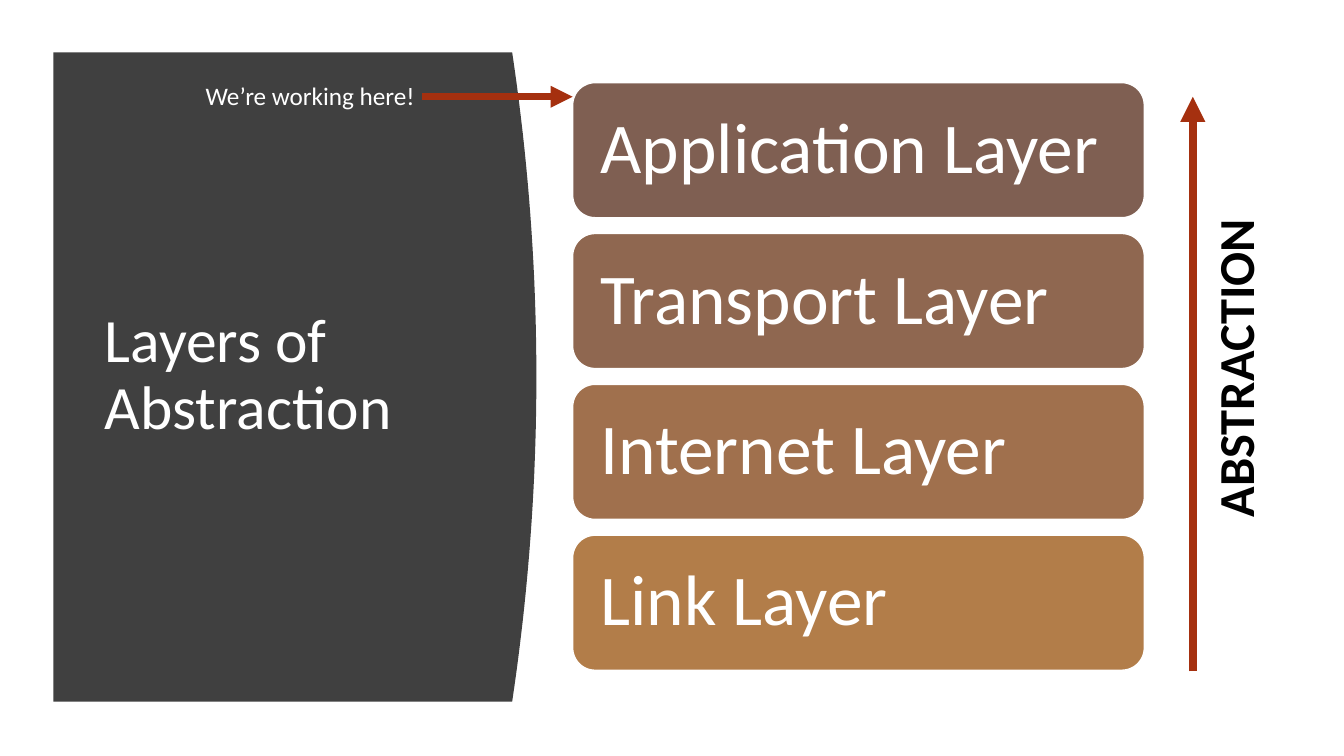
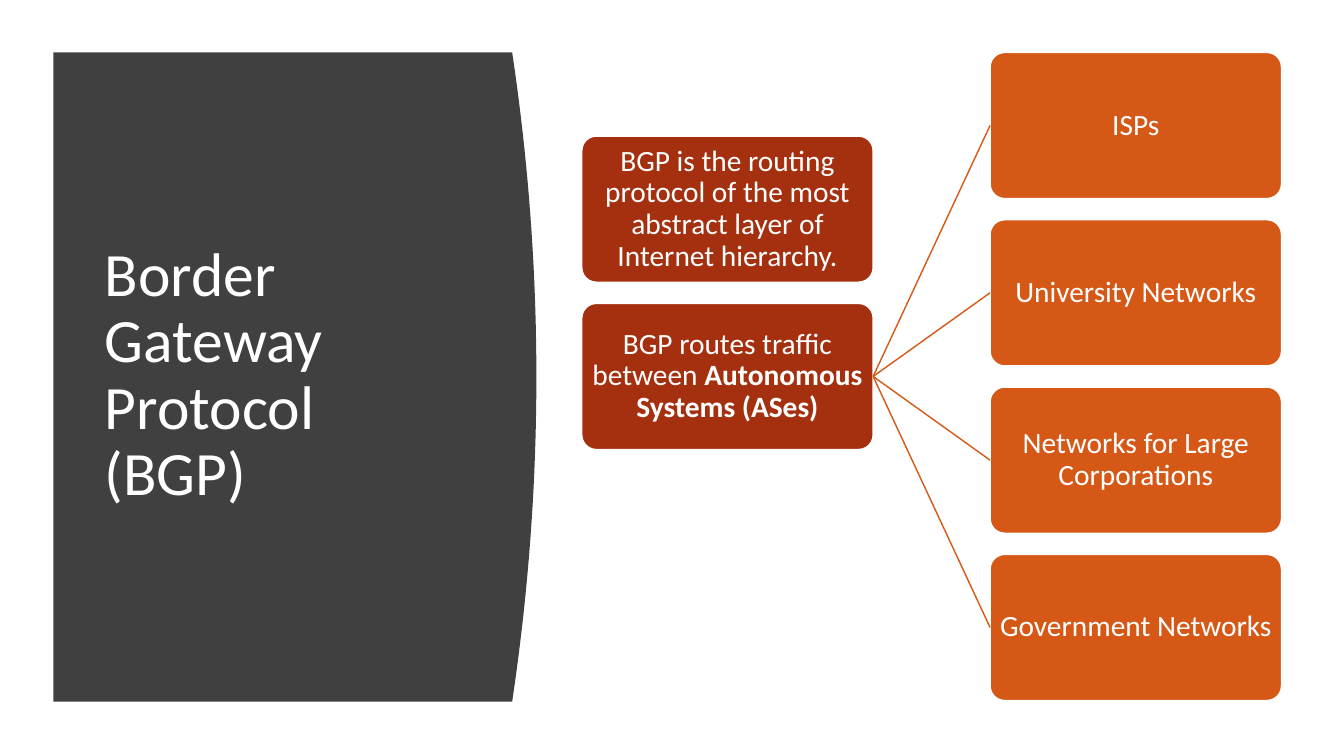
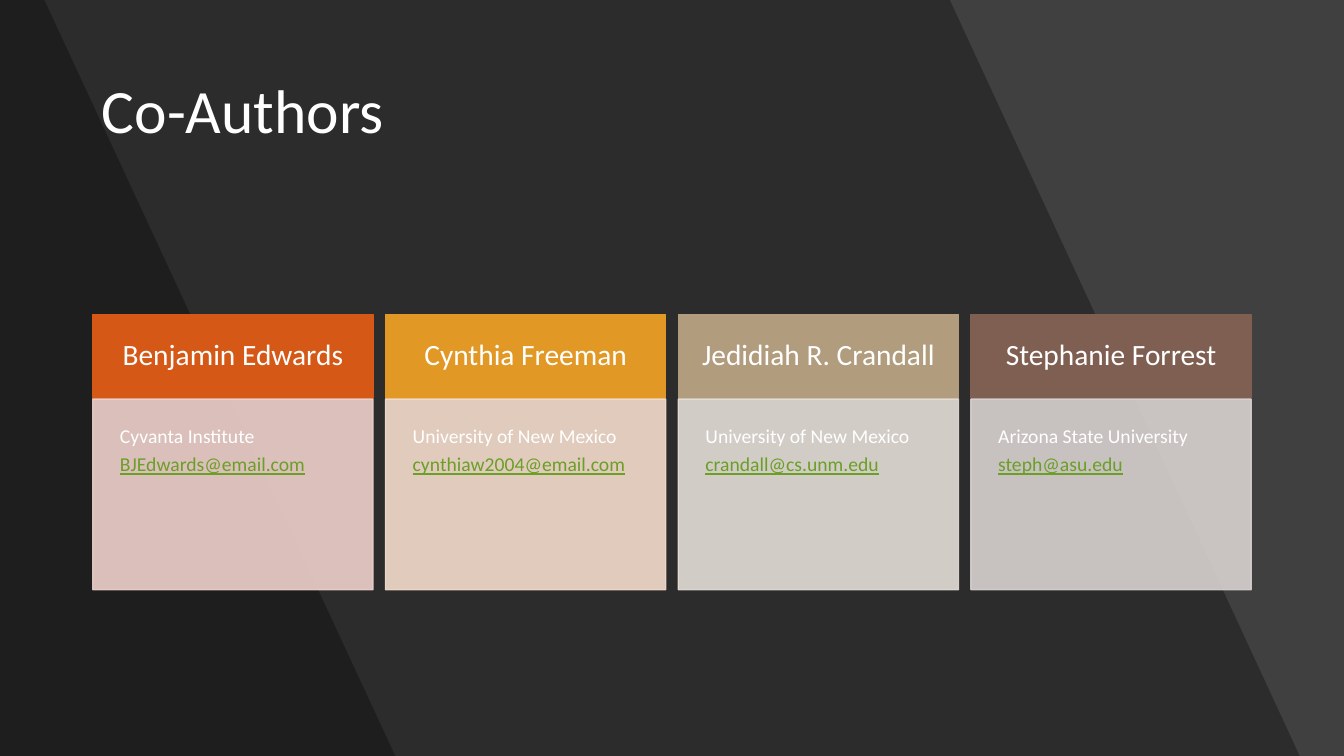
from dataclasses import dataclass

from lxml.etree import SubElement
from pptx import Presentation
from pptx.dml.color import RGBColor
from pptx.enum.shapes import MSO_CONNECTOR, MSO_SHAPE
from pptx.enum.text import MSO_ANCHOR, MSO_AUTO_SIZE, PP_ALIGN
from pptx.oxml.ns import qn
from pptx.util import Inches, Pt


@dataclass(frozen=True)
class Theme:
    font: str = "Calibri"
    white: str = "FFFFFF"
    black: str = "000000"
    dark: str = "404040"
    red: str = "A5300F"
    orange: str = "D55816"
    link: str = "6B9F25"
    layers: tuple = ("7F5F52", "8F6750", "A0704D", "B27D49")
    headers: tuple = ("D55816", "E19825", "B19C7D", "7F5F52")
    bodies: tuple = ("EFD1CC", "F4DDCD", "E4DED7", "D8D2D1")
    title_size: int = 44
    layer_size: int = 51
    axis_size: int = 36
    node_size: int = 21
    note_size: int = 18
    detail_size: int = 14


THEME = Theme()
TITLE_ONLY = 5
SIDE_TITLE = (0.94, 1.11, 3.74, 5.24)
TOP_TITLE = (0.91, 0.4, 11.51, 1.45)


def rgb(color):
    return RGBColor.from_string(color)


def inches(lengths):
    return [Inches(length) for length in lengths]


def spread(first, last, count):
    return [first + (last - first) * step / (count - 1) for step in range(count)]


def style_para(para, size, color, align=PP_ALIGN.LEFT, spacing=0.9):
    para.alignment = align
    para.line_spacing = spacing
    para.font.name = THEME.font
    para.font.size = Pt(size)
    para.font.color.rgb = rgb(color)


def write(box, text, size, color=THEME.white, align=PP_ALIGN.LEFT,
          anchor=MSO_ANCHOR.MIDDLE, inset=None, spacing=0.9):
    frame = box.text_frame
    frame.word_wrap = True
    frame.auto_size = MSO_AUTO_SIZE.NONE
    frame.vertical_anchor = anchor
    if inset is not None:
        frame.margin_left = frame.margin_right = Inches(inset)
        frame.margin_top = frame.margin_bottom = Inches(inset)
    para = frame.paragraphs[0]
    para.text = text
    style_para(para, size, color, align, spacing)
    return para


def set_alpha(shape, percent):
    for color in shape.element.spPr.iter(qn("a:srgbClr")):
        SubElement(color, qn("a:alpha"), val=str(percent * 1000))


def add_block(page, kind, place, fill, line, corner=None):
    block = page.shapes.add_shape(kind, *inches(place))
    block.shadow.inherit = False
    block.fill.solid()
    block.fill.fore_color.rgb = rgb(fill)
    block.line.color.rgb = rgb(line)
    block.line.width = Pt(1)
    if corner is not None:
        block.adjustments[0] = corner
    return block


def add_outline(page, points, fill):
    corners = [tuple(inches(point)) for point in points]
    builder = page.shapes.build_freeform(*corners[0], scale=1.0)
    builder.add_line_segments(corners[1:], close=True)
    outline = builder.convert_to_shape()
    outline.shadow.inherit = False
    outline.fill.solid()
    outline.fill.fore_color.rgb = rgb(fill)
    outline.line.fill.background()
    return outline


def add_line(page, start, end, color, width, arrow=False):
    line = page.shapes.add_connector(MSO_CONNECTOR.STRAIGHT, *inches(start + end))
    line.line.color.rgb = rgb(color)
    line.line.width = Pt(width)
    if arrow:
        SubElement(line.line._get_or_add_ln(), qn("a:tailEnd"), type="triangle")
    SubElement(line.element.spPr, qn("a:effectLst"))
    return line


def add_label(page, place, text, size, color):
    label = page.shapes.add_textbox(*inches(place))
    para = write(label, text, size, color, anchor=MSO_ANCHOR.TOP, spacing=1.0)
    return label, para


def add_title(page, text, place):
    title = page.shapes.title
    title.left, title.top, title.width, title.height = inches(place)
    write(title, text, THEME.title_size)
    page.shapes.element.append(title.element)


def add_page(deck):
    return deck.slides.add_slide(deck.slide_layouts[TITLE_ONLY])


def add_panel_page(deck, title):
    page = add_page(deck)
    top, bottom, bulge = 0.52, 6.96, 0.24
    middle, half = (top + bottom) / 2, (bottom - top) / 2
    curve = [(5.32 - bulge * ((y - middle) / half) ** 2, y)
             for y in spread(top, bottom, 41)]
    add_outline(page, [(0.53, top), *curve, (0.53, bottom)], THEME.dark)
    add_title(page, title, SIDE_TITLE)
    return page


def add_node(page, left, top, text, fill):
    node = add_block(page, MSO_SHAPE.ROUNDED_RECTANGLE, (left, top, 2.89, 1.45),
                     fill, THEME.white, corner=0.1)
    para = write(node, text, THEME.node_size, align=PP_ALIGN.CENTER, inset=0.01)
    return node, para


def add_card(page, left, person, institution, address, header_fill, body_fill):
    header = add_block(page, MSO_SHAPE.RECTANGLE, (left, 3.12, 2.78, 0.83),
                       header_fill, header_fill)
    write(header, person, THEME.node_size, align=PP_ALIGN.CENTER, inset=0.22)
    body = add_block(page, MSO_SHAPE.RECTANGLE, (left, 3.96, 2.78, 1.89),
                     body_fill, body_fill)
    set_alpha(body, 90)
    para = write(body, institution, THEME.detail_size,
                 anchor=MSO_ANCHOR.TOP, inset=0.27)
    para.space_after = Pt(5)
    contact = body.text_frame.add_paragraph()
    contact.text = address
    style_para(contact, THEME.detail_size, THEME.link)
    contact.font.underline = True


def build_layers(deck):
    page = add_panel_page(deck, "Layers of Abstraction")
    names = ("Application Layer", "Transport Layer", "Internet Layer", "Link Layer")
    for name, top, fill in zip(names, spread(0.82, 5.31, len(names)), THEME.layers):
        layer = add_block(page, MSO_SHAPE.ROUNDED_RECTANGLE,
                          (5.68, top, 5.67, 1.34), fill, THEME.white)
        write(layer, name, THEME.layer_size, inset=0.21)
    add_line(page, (11.83, 6.66), (11.83, 0.96), THEME.red, 6, arrow=True)
    axis, para = add_label(page, (11.89, 1.87, 0.81, 3.36), "ABSTRACTION",
                           THEME.axis_size, THEME.black)
    axis.text_frame._txBody.bodyPr.set("vert", "vert270")
    para.font.bold = True
    add_line(page, (4.19, 0.96), (5.68, 0.96), THEME.red, 5.25, arrow=True)
    add_label(page, (1.94, 0.75, 2.4, 0.4), "We’re working here!",
              THEME.note_size, THEME.white)


def build_protocol(deck):
    page = add_panel_page(deck, "Border Gateway Protocol (BGP)")
    add_node(page, 5.77, 1.35, "BGP is the routing protocol of the most abstract "
             "layer of Internet hierarchy.", THEME.red)
    router, para = add_node(page, 5.77, 3.01, "BGP routes traffic between ", THEME.red)
    span = para.add_run()
    span.text = "Autonomous Systems (ASes)"
    span.font.bold = True
    networks = ("ISPs", "University Networks", "Networks for Large Corporations",
                "Government Networks")
    for name, top in zip(networks, spread(0.52, 5.5, len(networks))):
        network, _ = add_node(page, 9.82, top, name, THEME.orange)
        link = add_line(page, (8.66, 3.73), (9.82, top), THEME.orange, 1)
        link.begin_connect(router, 3)
        link.end_connect(network, 1)


def build_authors(deck):
    page = add_page(deck)
    page.background.fill.solid()
    page.background.fill.fore_color.rgb = rgb(THEME.dark)
    for top_edge, bottom_edge in ((9.42, 12.89), (0.44, 3.92)):
        band = add_outline(page, [(0, 0), (top_edge, 0), (bottom_edge, 7.5), (0, 7.5)],
                           THEME.black)
        set_alpha(band, 30)
    add_title(page, "Co-Authors", TOP_TITLE)
    authors = (
        ("Benjamin Edwards", "Cyvanta Institute", "BJEdwards@email.com"),
        ("Cynthia Freeman", "University of New Mexico", "cynthiaw2004@email.com"),
        ("Jedidiah R. Crandall", "University of New Mexico", "crandall@cs.unm.edu"),
        ("Stephanie Forrest", "Arizona State University", "steph@asu.edu"),
    )
    lefts = spread(0.92, 9.63, len(authors))
    for left, author, header, body in zip(lefts, authors, THEME.headers, THEME.bodies):
        add_card(page, left, *author, header, body)


def main():
    deck = Presentation()
    deck.slide_width, deck.slide_height = inches((13.33, 7.5))
    build_layers(deck)
    build_protocol(deck)
    build_authors(deck)
    deck.save("out.pptx")


if __name__ == "__main__":
    main()
